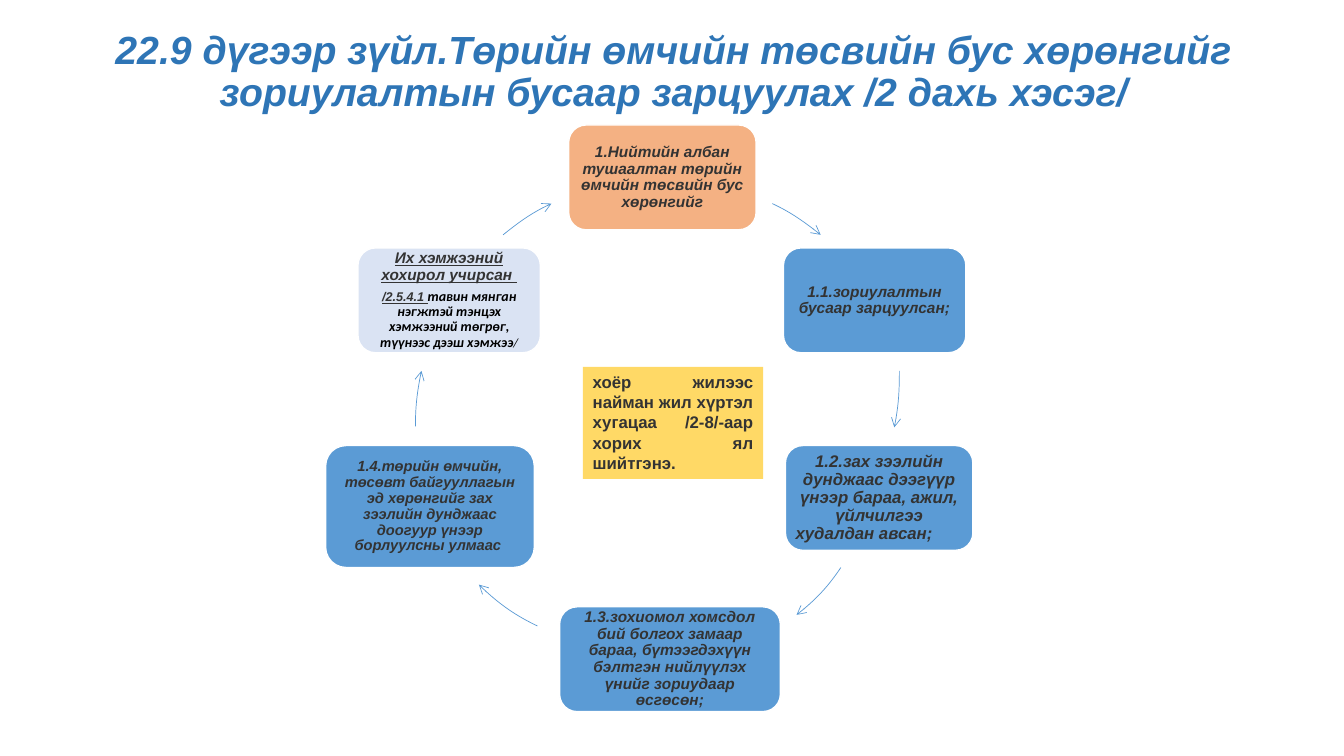
from dataclasses import dataclass, replace

from lxml import etree
from pptx import Presentation
from pptx.dml.color import RGBColor
from pptx.enum.shapes import MSO_SHAPE
from pptx.enum.text import MSO_ANCHOR, PP_ALIGN
from pptx.oxml.ns import qn
from pptx.util import Pt

PX = 9144
ROUNDED = MSO_SHAPE.ROUNDED_RECTANGLE
RECTANGLE = MSO_SHAPE.RECTANGLE
MIDDLE = MSO_ANCHOR.MIDDLE
TOP = MSO_ANCHOR.TOP
CENTER = PP_ALIGN.CENTER
LEFT = PP_ALIGN.LEFT
JUSTIFY = PP_ALIGN.JUSTIFY
BLUE = "5B9BD5"
RING_SIZE = 488

Point = tuple[int, int]


@dataclass(frozen=True)
class Style:
    size: float = 11
    name: str = "Arial"
    color: str = "333333"
    bold: bool = True
    italic: bool = True
    underline: bool = False


@dataclass(frozen=True)
class Paragraph:
    pieces: tuple[tuple[str, Style], ...]
    align: PP_ALIGN = CENTER
    spacing: float = 0.9
    after: int = 0


@dataclass(frozen=True)
class Step:
    left: int
    top: int
    width: int
    height: int
    fill: str
    paragraphs: tuple[Paragraph, ...]
    side_margin: int = 5


@dataclass(frozen=True)
class Arc:
    ring: Point
    start: Point
    bend_out: Point
    bend_in: Point
    end: Point


def one(text: str, style: Style = Style(), align: PP_ALIGN = CENTER) -> Paragraph:
    return Paragraph(((text, style),), align)


HEADING = Style(underline=True)
CLAUSE = replace(HEADING, size=9)
AMOUNT = Style(size=10, name="Calibri", color="000000")
CLOSING = replace(AMOUNT, size=9, bold=False)
LARGER = Style(size=12)

TITLE = one(
    "22.9 дүгээр зүйл.Төрийн өмчийн төсвийн бус хөрөнгийг зориулалтын бусаар зарцуулах /2 дахь хэсэг/",
    Style(size=28, color="2E75B6"),
)
PENALTY = Paragraph(
    (("хоёр жилээс найман жил хүртэл хугацаа /2-8/-аар хорих ял шийтгэнэ.",
      Style(size=12, italic=False)),),
    JUSTIFY, 1.0,
)

STEPS = (
    Step(564, 124, 186, 104, "F4B183", (
        one("1.Нийтийн албан тушаалтан төрийн өмчийн төсвийн бус хөрөнгийг"),)),
    Step(777, 246, 181, 104, BLUE, (
        one("1.1.зориулалтын бусаар зарцуулсан;"),)),
    Step(779, 442, 186, 104, BLUE, (
        one("1.2.зах зээлийн дунджаас дээгүүр үнээр бараа, ажил, үйлчилгээ", LARGER),
        one("худалдан авсан;", LARGER, LEFT))),
    Step(555, 602, 219, 104, BLUE, (
        one("1.3.зохиомол хомсдол бий болгох замаар бараа, бүтээгдэхүүн бэлтгэн нийлүүлэх үнийг зориудаар өсгөсөн;"),),
        side_margin=10),
    Step(323, 442, 207, 121, BLUE, (
        one("1.4.төрийн өмчийн, төсөвт байгууллагын эд хөрөнгийг зах зээлийн дунджаас доогуур үнээр борлуулсны улмаас ",
            Style(size=10.5)),)),
    Step(355, 246, 181, 104, "DAE3F3", (
        Paragraph((("Их хэмжээний хохирол учирсан ", HEADING),), after=4),
        Paragraph((
            ("/2.5.4.1 ", CLAUSE),
            ("тавин мянган нэгжтэй тэнцэх хэмжээний төгрөг, түүнээс дээш хэмжээ", AMOUNT),
            ("/", CLOSING))))),
)

ARCS = (
    Arc((412, 176), (766, 202), (783, 210), (799, 221), (814, 233)),
    Arc((403, 132), (892, 368), (892, 387), (891, 405), (887, 424)),
    Arc((392, 177), (834, 563), (822, 581), (807, 597), (790, 610)),
    Arc((399, 159), (533, 621), (512, 611), (492, 597), (475, 580)),
    Arc((412, 176), (412, 423), (412, 405), (414, 386), (418, 368)),
    Arc((412, 176), (499, 233), (514, 221), (529, 210), (547, 202)),
)


def rgb(value: str) -> RGBColor:
    return RGBColor.from_string(value)


def apply_style(font, style: Style) -> None:
    font.size = Pt(style.size)
    font.name = style.name
    font.bold = style.bold
    font.italic = style.italic
    font.underline = style.underline
    font.color.rgb = rgb(style.color)


def write(frame, paragraphs: tuple[Paragraph, ...], anchor: MSO_ANCHOR) -> None:
    frame.word_wrap = True
    frame.vertical_anchor = anchor
    for index, content in enumerate(paragraphs):
        paragraph = frame.add_paragraph() if index else frame.paragraphs[0]
        paragraph.alignment = content.align
        paragraph.line_spacing = content.spacing
        paragraph.space_before = Pt(0)
        paragraph.space_after = Pt(content.after)
        for text, style in content.pieces:
            run = paragraph.add_run()
            run.text = text
            if len(content.pieces) > 1:
                apply_style(run.font, style)
            else:
                apply_style(paragraph.font, style)


def draw_step(slide, step: Step) -> None:
    box = slide.shapes.add_shape(
        ROUNDED, step.left * PX, step.top * PX, step.width * PX, step.height * PX)
    box.shadow.inherit = False
    box.fill.solid()
    box.fill.fore_color.rgb = rgb(step.fill)
    box.line.color.rgb = rgb("FFFFFF")
    box.line.width = Pt(1)
    frame = box.text_frame
    frame.margin_left = frame.margin_right = step.side_margin * PX
    frame.margin_top = frame.margin_bottom = 5 * PX
    write(frame, step.paragraphs, MIDDLE)


def draw_arc(slide, arc: Arc) -> None:
    left, top = arc.ring
    builder = slide.shapes.build_freeform(left, top, scale=PX)
    builder.move_to(left + RING_SIZE, top + RING_SIZE)
    builder.move_to(*arc.start)
    builder.add_line_segments((arc.bend_out, arc.bend_in, arc.end), close=False)
    arrow = builder.convert_to_shape()

    outline = next(arrow._element.iter(qn("a:path")))
    ring_corner, opposite_corner, _, *segments = list(outline)
    outline.remove(ring_corner)
    outline.remove(opposite_corner)
    curve = etree.SubElement(outline, qn("a:cubicBezTo"))
    for segment in segments:
        curve.append(segment[0])
        outline.remove(segment)

    arrow.shadow.inherit = False
    arrow.fill.background()
    arrow.line.color.rgb = rgb(BLUE)
    arrow.line.width = Pt(0.5)
    etree.SubElement(arrow.line._get_or_add_ln(), qn("a:tailEnd"), type="arrow")


def main() -> None:
    deck = Presentation()
    deck.slide_width = 1333 * PX
    deck.slide_height = 750 * PX
    slide = deck.slides.add_slide(deck.slide_layouts[6])

    title = slide.shapes.add_textbox(93 * PX, 0, 1150 * PX, 145 * PX)
    write(title.text_frame, (TITLE,), MIDDLE)

    for step, arc in zip(STEPS, ARCS):
        draw_step(slide, step)
        draw_arc(slide, arc)

    penalty = slide.shapes.add_shape(RECTANGLE, 578 * PX, 364 * PX, 179 * PX, 111 * PX)
    penalty.shadow.inherit = False
    penalty.fill.solid()
    penalty.fill.fore_color.rgb = rgb("FFD966")
    penalty.line.fill.background()
    write(penalty.text_frame, (PENALTY,), TOP)

    deck.save("out.pptx")


if __name__ == "__main__":
    main()
